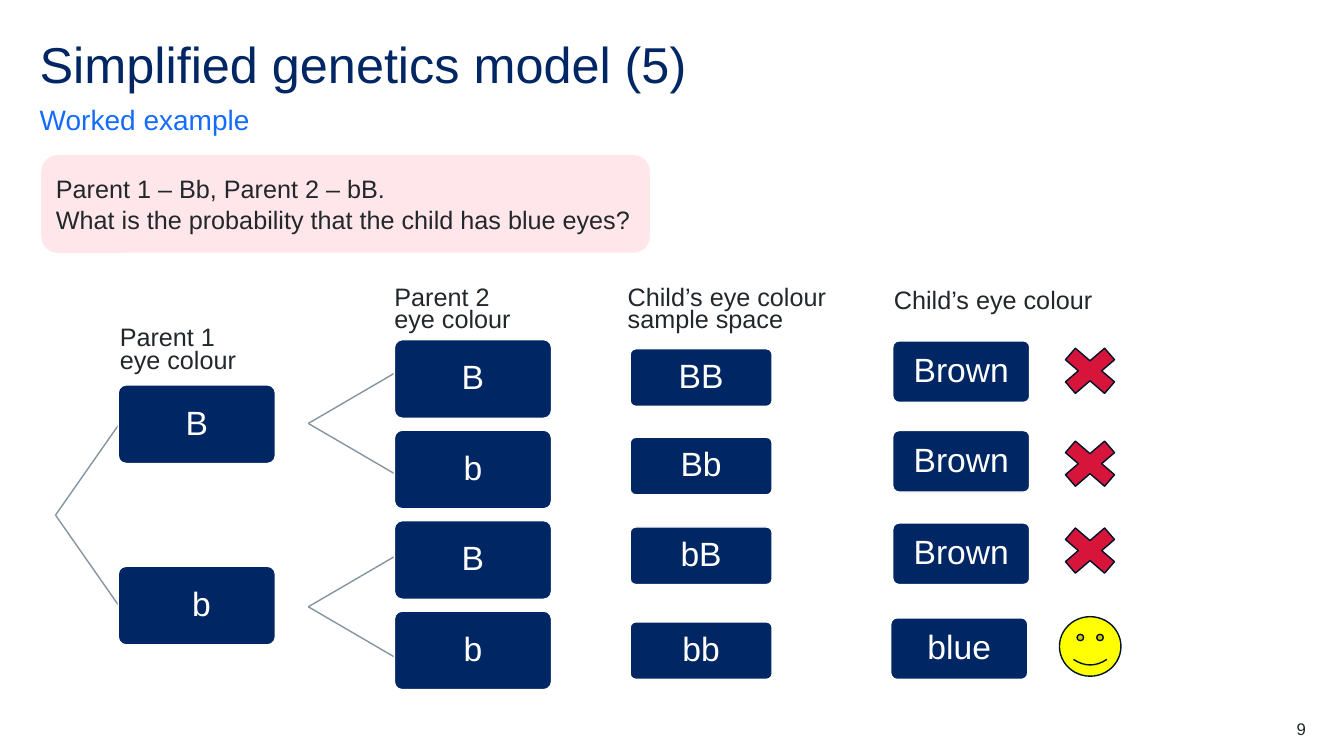
"""Build the worked example slide of the simplified genetics model."""
from lxml.etree import SubElement
from pptx import Presentation
from pptx.dml.color import RGBColor
from pptx.enum.shapes import MSO_CONNECTOR, MSO_SHAPE
from pptx.enum.text import MSO_ANCHOR, MSO_AUTO_SIZE, PP_ALIGN
from pptx.oxml.ns import qn
from pptx.util import Cm, Pt

COLOURS = {
    "navy": "002664",
    "blue": "146CFD",
    "pink": "FFE6EA",
    "text": "22272B",
    "white": "FFFFFF",
    "branch": "86949F",
    "red": "D7153A",
    "yellow": "FFFF00",
    "outline": "00112C",
}


def write_text(shape, text, size, colour, spacing=1.0, align=PP_ALIGN.LEFT,
               anchor=MSO_ANCHOR.TOP, margin=0.0):
    frame = shape.text_frame
    frame.text = text
    frame.word_wrap = True
    frame.auto_size = MSO_AUTO_SIZE.NONE
    frame.vertical_anchor = anchor
    frame.margin_left = frame.margin_right = Cm(margin)
    frame.margin_top = frame.margin_bottom = Cm(margin)
    for paragraph in frame.paragraphs:
        paragraph.alignment = align
        paragraph.line_spacing = spacing
        paragraph.space_before = Pt(0)
        for run in paragraph.runs:
            run.font.name = "Arial"
            run.font.size = Pt(size)
            run.font.color.rgb = RGBColor.from_string(COLOURS[colour])


def add_filled(kind, left, top, width, height, fill, line=None, label=None):
    shape = slide.shapes.add_shape(kind, Cm(left), Cm(top), Cm(width), Cm(height))
    shape.shadow.inherit = False
    shape.fill.solid()
    shape.fill.fore_color.rgb = RGBColor.from_string(COLOURS[fill])
    if line:
        shape.line.color.rgb = RGBColor.from_string(COLOURS[line])
        shape.line.width = Pt(1)
    else:
        shape.line.fill.background()
    if label:
        shape.adjustments[0] = 0.1
        write_text(shape, label, 24, "white", 0.9, PP_ALIGN.CENTER,
                   MSO_ANCHOR.MIDDLE, 0.13)
    return shape


presentation = Presentation()
presentation.slide_width = Cm(33.87)
presentation.slide_height = Cm(19.05)
slide = presentation.slides.add_slide(presentation.slide_layouts[1])

title = slide.shapes.title
title.left, title.top, title.width, title.height = Cm(1), Cm(1), Cm(31.9), Cm(1.52)
write_text(title, "Simplified genetics model (5)", 36, "navy", 0.9)

subtitle = slide.placeholders[1]
subtitle.left, subtitle.top, subtitle.width, subtitle.height = Cm(1), Cm(2.57), Cm(31.9), Cm(0.86)
write_text(subtitle, "Worked example", 20, "blue", 1.5, anchor=MSO_ANCHOR.BOTTOM)
subtitle_paragraph = subtitle.text_frame.paragraphs[0]
subtitle_paragraph.space_after = Pt(12)
properties = subtitle_paragraph._p.get_or_add_pPr()
properties.set("marL", "0")
properties.set("indent", "0")
SubElement(properties, qn("a:buNone"))

question = add_filled(MSO_SHAPE.ROUNDED_RECTANGLE, 1.04, 3.91, 15.34, 2.46, "pink")
write_text(question, "Parent 1 – Bb, Parent 2 – bB.\n"
           "What is the probability that the child has blue eyes?",
           18, "text", anchor=MSO_ANCHOR.MIDDLE, margin=0.25)

forks = [(1.4, 12.98, 3, 2.29), (7.77, 10.67, 9.95, 1.27), (7.77, 15.29, 9.95, 1.27)]
for start_x, start_y, end_x, rise in forks:
    for end_y in (start_y - rise, start_y + rise):
        branch = slide.shapes.add_connector(
            MSO_CONNECTOR.STRAIGHT, Cm(start_x), Cm(start_y), Cm(end_x), Cm(end_y))
        branch.line.color.rgb = RGBColor.from_string(COLOURS["branch"])
        branch.line.width = Pt(1)
        SubElement(branch._element.spPr, qn("a:effectLst"))

parents = [(2.98, 9.7, 4.57, ["B", " b"]), (9.94, 8.56, 2.28, ["B", "b", "B", "b"])]
for left, first_top, step, genes in parents:
    for row, gene in enumerate(genes):
        add_filled(MSO_SHAPE.ROUNDED_RECTANGLE, left, first_top + row * step, 3.96, 1.98,
                   "navy", "white", gene)

headings = [
    ("Parent 1\neye colour", 3.02, 8.28, 0.75),
    ("Parent 2\neye colour", 9.94, 7.26, 0.75),
    ("Child’s eye colour\nsample space", 15.82, 7.26, 0.75),
    ("Child’s eye colour", 22.53, 7.16, 1.0),
]
for heading, left, top, spacing in headings:
    box = slide.shapes.add_textbox(Cm(left), Cm(top), Cm(5.5), Cm(1.4))
    write_text(box, heading, 18, "text", spacing)

children = [
    ("BB", 8.79, "Brown", 22.5, 8.59),
    ("Bb", 11.02, "Brown", 22.5, 10.85),
    ("bB", 13.28, "Brown", 22.5, 13.18),
    ("bb", 15.67, "blue", 22.45, 15.57),
]
for genotype, genotype_top, eyes, eyes_left, eyes_top in children:
    add_filled(MSO_SHAPE.ROUNDED_RECTANGLE, 15.88, genotype_top, 3.58, 1.45,
               "navy", "white", genotype)
    add_filled(MSO_SHAPE.ROUNDED_RECTANGLE, eyes_left, eyes_top, 3.45, 1.55,
               "navy", "white", eyes)

for cross_top in (8.53, 10.87, 13.06):
    add_filled(MSO_SHAPE.MATH_MULTIPLY, 26.52, cross_top, 1.9, 1.63, "red", "outline")
add_filled(MSO_SHAPE.SMILEY_FACE, 26.7, 15.54, 1.55, 1.5, "yellow", "outline")

page_number = slide.shapes.add_textbox(Cm(30.91), Cm(18.11), Cm(2), Cm(0.51))
write_text(page_number, "9", 12, "text", align=PP_ALIGN.RIGHT)

presentation.save("out.pptx")
